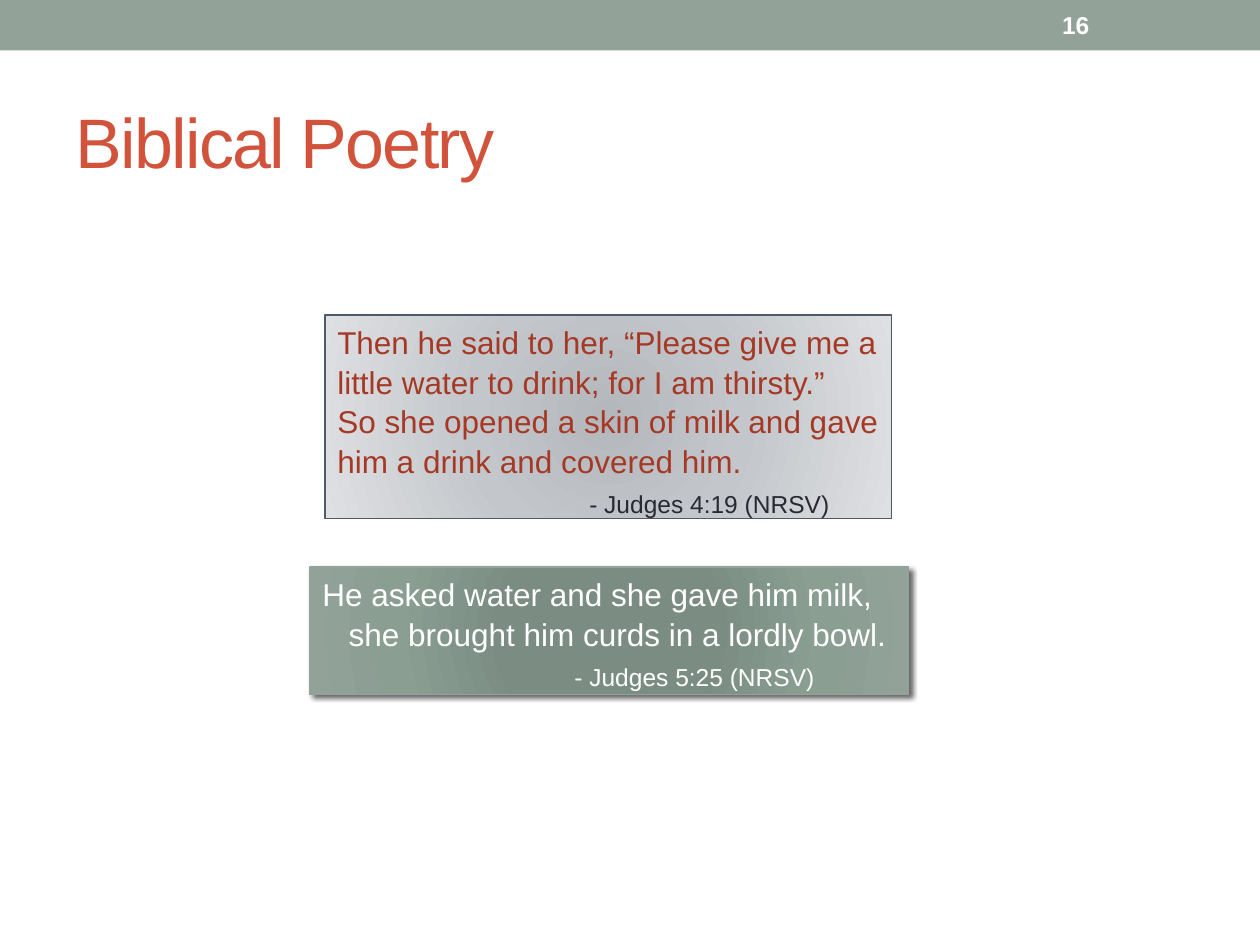
from dataclasses import dataclass
from typing import Optional

from lxml import etree
from pptx import Presentation
from pptx import util as u
from pptx.dml.color import RGBColor
from pptx.enum import shapes, text
from pptx.oxml import ns

FONT = "Arial"
WHITE = RGBColor(0xFF, 0xFF, 0xFF)
SAGE = RGBColor(0x93, 0xA2, 0x99)
CORAL = RGBColor(0xD2, 0x53, 0x3C)
BRICK = RGBColor(0xA5, 0x39, 0x26)
INK = RGBColor(0x29, 0x29, 0x34)
SLATE = RGBColor(0x4C, 0x5A, 0x6A)
BLACK = RGBColor(0, 0, 0)
GREY_STOPS = (
    (0, RGBColor(0xB4, 0xB7, 0xBC)),
    (45, RGBColor(0xC3, 0xC7, 0xCB)),
    (100, RGBColor(0xDF, 0xE0, 0xE3)),
)
SAGE_STOPS = (
    (0, RGBColor(0x7B, 0x8E, 0x82)),
    (34, RGBColor(0x7B, 0x8D, 0x83)),
    (70, RGBColor(0x8A, 0x9E, 0x92)),
    (100, SAGE),
)


@dataclass(frozen=True)
class Line:
    words: str
    color: RGBColor
    size: int = 18
    indent: float = 0
    before: float = 0


@dataclass(frozen=True)
class Quote:
    left: float
    top: float
    width: float
    height: float
    stops: tuple
    outline: RGBColor
    lines: tuple
    shadow: bool = False


def citation(words: str, color: RGBColor) -> Line:
    return Line(words, color, size=14, indent=5.08, before=4.3)


QUOTES = (
    Quote(6.55, 6.35, 11.43, 4.11, GREY_STOPS, SLATE, (
        Line("Then he said to her, “Please give me a little water to drink; "
             "for I am thirsty.”\vSo she opened a skin of milk and gave him "
             "a drink and covered him.", BRICK),
        citation("- Judges 4:19 (NRSV)", INK),
    )),
    Quote(6.25, 11.43, 12.07, 2.57, SAGE_STOPS, SAGE, (
        Line("He asked water and she gave him milk,", WHITE),
        Line("she brought him curds in a lordly bowl.", WHITE, indent=0.53),
        citation("- Judges 5:25 (NRSV)", WHITE),
    ), shadow=True),
)


def add_node(parent, tag: str, **attributes):
    return etree.SubElement(parent, ns.qn(tag),
                            {key: str(value) for key, value in attributes.items()})


def style(para, size: int, color: RGBColor, bold: Optional[bool] = None) -> None:
    para.alignment = text.PP_ALIGN.LEFT
    para.font.name = FONT
    para.font.size = u.Pt(size)
    para.font.color.rgb = color
    para.font.bold = bold


def add_box(page, left: float, top: float, width: float, height: float):
    box = page.shapes.add_shape(shapes.MSO_SHAPE.RECTANGLE, u.Cm(left),
                                u.Cm(top), u.Cm(width), u.Cm(height))
    box.shadow.inherit = False
    return box


def fill_radially(box, stops: tuple) -> None:
    box.fill.background()
    properties = box._element.spPr
    blank = properties.find(ns.qn("a:noFill"))
    gradient = etree.Element(ns.qn("a:gradFill"), rotWithShape="1")
    stop_list = add_node(gradient, "a:gsLst")
    for position, color in stops:
        stop = add_node(stop_list, "a:gs", pos=position * 1000)
        add_node(stop, "a:srgbClr", val=color)
    circle = add_node(gradient, "a:path", path="circle")
    add_node(circle, "a:fillToRect", l=100000, t=100000, r=100000, b=100000)
    properties.replace(blank, gradient)


def cast_shadow(box) -> None:
    effects = box._element.spPr.find(ns.qn("a:effectLst"))
    shadow = add_node(effects, "a:outerShdw", blurRad=u.Pt(3), dist=u.Pt(2),
                      dir=45 * 60000, algn="tl", rotWithShape=0)
    color = add_node(shadow, "a:srgbClr", val=BLACK)
    add_node(color, "a:alpha", val=60000)


def draw_quote(page, quote: Quote) -> None:
    box = add_box(page, quote.left, quote.top, quote.width, quote.height)
    fill_radially(box, quote.stops)
    box.line.color.rgb = quote.outline
    box.line.width = u.Pt(0.75)
    if quote.shadow:
        cast_shadow(box)
    frame = box.text_frame
    frame.word_wrap = True
    frame.vertical_anchor = text.MSO_ANCHOR.TOP
    for index, line in enumerate(quote.lines):
        para = frame.add_paragraph() if index else frame.paragraphs[0]
        para.text = line.words
        style(para, line.size, line.color)
        para.line_spacing = 1.05
        para.space_before = u.Pt(line.before)
        para._p.get_or_add_pPr().set("marL", str(u.Cm(line.indent)))


def draw_header(page) -> None:
    bar = add_box(page, 0, 0, 25.4, 1.02)
    bar.fill.solid()
    bar.fill.fore_color.rgb = SAGE
    bar.line.fill.background()
    number = page.shapes.add_textbox(u.Cm(21.16), u.Cm(0.05), u.Cm(2.97), u.Cm(0.91))
    frame = number.text_frame
    frame.word_wrap = True
    frame.vertical_anchor = text.MSO_ANCHOR.MIDDLE
    frame.text = "16"
    style(frame.paragraphs[0], 14, WHITE, bold=True)


def draw_title(page) -> None:
    title = page.shapes.title
    title.left, title.top = u.Cm(1.27), u.Cm(1.47)
    title.width, title.height = u.Cm(22.86), u.Cm(2.74)
    frame = title.text_frame
    frame.vertical_anchor = text.MSO_ANCHOR.MIDDLE
    frame.text = "Biblical Poetry"
    para = frame.paragraphs[0]
    style(para, 40, CORAL)
    para.runs[0]._r.get_or_add_rPr().set("spc", "-100")


def main() -> None:
    deck = Presentation()
    deck.slide_width, deck.slide_height = u.Cm(25.4), u.Cm(19.05)
    page = deck.slides.add_slide(deck.slide_layouts[5])
    draw_header(page)
    draw_title(page)
    for quote in QUOTES:
        draw_quote(page, quote)
    deck.save("out.pptx")


if __name__ == "__main__":
    main()
